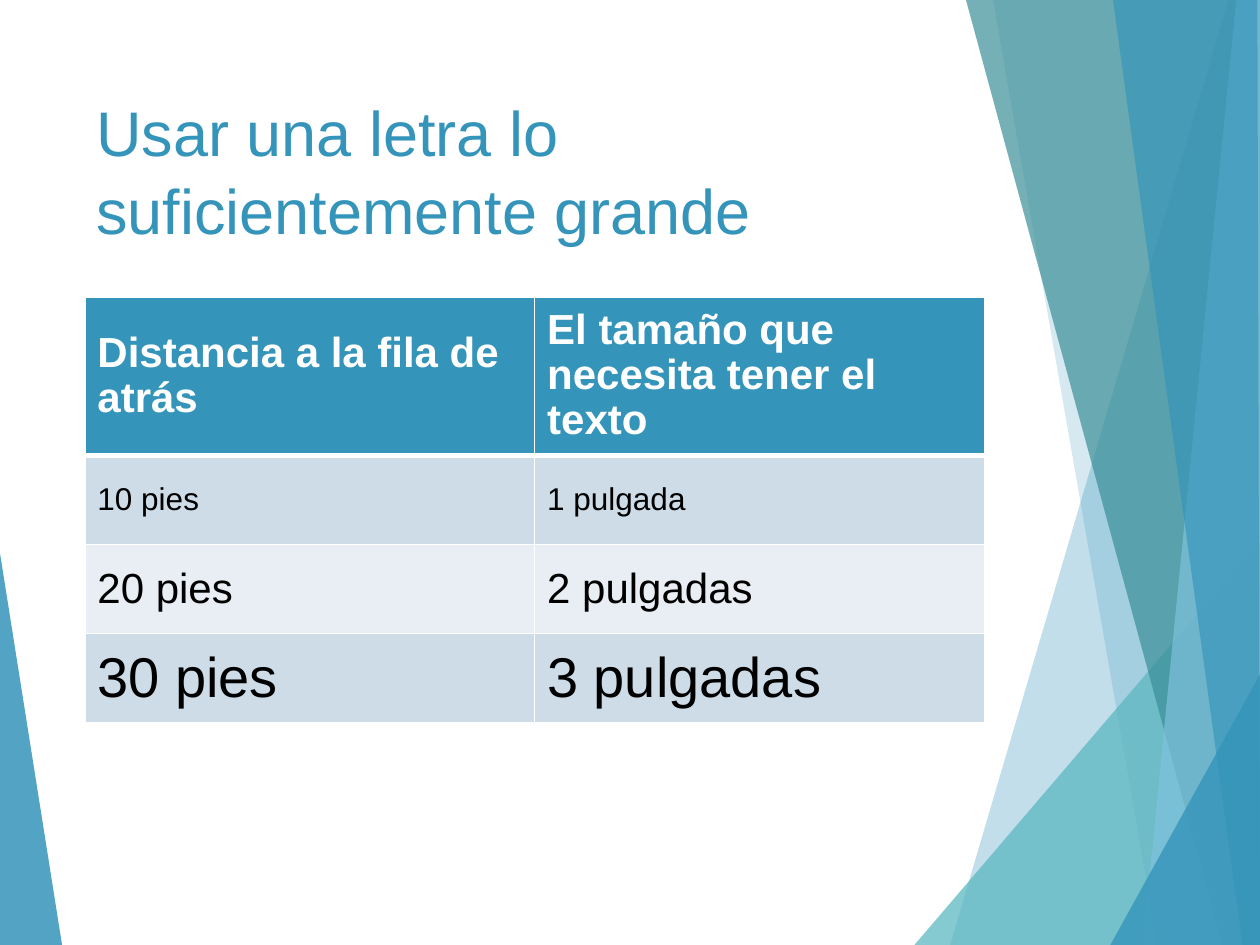
from typing import NamedTuple

from lxml import etree
from pptx import Presentation
from pptx.dml.color import RGBColor
from pptx.enum.shapes import MSO_CONNECTOR
from pptx.enum.text import MSO_ANCHOR
from pptx.oxml.ns import qn
from pptx.util import Pt

STRAIGHT = MSO_CONNECTOR.STRAIGHT
TOP, MIDDLE = MSO_ANCHOR.TOP, MSO_ANCHOR.MIDDLE
FONT = "Arial"
WIDTH, HEIGHT = 720, 540
BLUE, WHITE, BLACK = "3494BA", "FFFFFF", "000000"


class Facet(NamedTuple):
    color: str
    opacity: int  # percent
    corners: list[tuple[float, float]]


class Row(NamedTuple):
    distance: str
    letter_height: str
    size: float
    fill: str
    color: str = BLACK
    height: float = 51
    bold: bool = False
    spacing: float = 1.0
    bottom_border: float = 1


def right_facet(color: str, opacity: int, top_x: float, bottom_x: float,
                top_y: float = 0, right_x: float = WIDTH) -> Facet:
    """A facet whose slanted side faces the right edge of the slide."""
    corners = [(top_x, top_y), (bottom_x, HEIGHT), (WIDTH, HEIGHT)]
    if top_x < right_x:
        corners.append((right_x, top_y))
    return Facet(color, opacity, corners)


GUIDES = [((404, 540), (720, 329)), ((554.5, 0), (651, 540))]

FACETS = [
    Facet(BLUE, 85, [(0, 316), (35.5, HEIGHT), (0, HEIGHT)]),
    right_facet(BLUE, 30, 702, 543),
    right_facet(BLUE, 20, 567.5, 661.5),
    right_facet("58B6C0", 72, 720, 522.5, top_y=309),
    right_facet("3A8F98", 70, 552, 698.5),
    right_facet("7FC1DB", 70, 706.5, 653),
    right_facet(BLUE, 65, 636, 710, right_x=718.5),
    right_facet(BLUE, 80, 720, 634.5, top_y=385.5),
]

ROWS = [
    Row("Distancia a la fila de atrás", "El tamaño que necesita tener el texto",
        24, BLUE, WHITE, 87, True, 0.96, 3),
    Row("10 pies", "1 pulgada", 18, "CEDCE7"),
    Row("20 pies", "2 pulgadas", 24, "E8EEF3"),
    Row("30 pies", "3 pulgadas", 32, "CEDCE7"),
]


def rgb(color: str) -> RGBColor:
    return RGBColor.from_string(color)


def paint(fill, color: str) -> None:
    fill.solid()
    fill.fore_color.rgb = rgb(color)


def write(frame, text: str, size: float, color: str, bold: bool = False,
          spacing: float = 1.0) -> None:
    frame.word_wrap = True
    paragraph = frame.paragraphs[0]
    paragraph.text = text
    paragraph.line_spacing = spacing
    font = paragraph.font
    font.name, font.size, font.bold = FONT, Pt(size), bold
    font.color.rgb = rgb(color)


def draw_guide(slide, start: tuple[float, float], end: tuple[float, float]) -> None:
    guide = slide.shapes.add_connector(
        STRAIGHT, *(Pt(value) for value in start + end))
    guide.line.color.rgb = rgb(WHITE)
    guide.line.width = Pt(0.75)
    etree.SubElement(guide._element.spPr, qn("a:effectLst"))


def draw_facet(slide, facet: Facet) -> None:
    first, *others = [(Pt(x), Pt(y)) for x, y in facet.corners]
    builder = slide.shapes.build_freeform(*first)
    builder.add_line_segments(others, close=True)
    shape = builder.convert_to_shape()
    shape.shadow.inherit = False
    shape.line.fill.background()
    paint(shape.fill, facet.color)
    color = shape._element.spPr.find(qn("a:solidFill"))[0]
    etree.SubElement(color, qn("a:alpha"), val=str(facet.opacity * 1000))


def add_borders(cell, top: float, bottom: float) -> None:
    properties = cell._tc.get_or_add_tcPr()
    for position, (side, width) in enumerate(
            [("lnL", 1), ("lnR", 1), ("lnT", top), ("lnB", bottom)]):
        border = etree.Element(qn(f"a:{side}"), w=str(Pt(width)))
        fill = etree.SubElement(border, qn("a:solidFill"))
        etree.SubElement(fill, qn("a:srgbClr"), val=WHITE)
        properties.insert(position, border)


def draw_table(slide, rows: list[Row], left: float, top: float, width: float) -> None:
    height = sum(row.height for row in rows)
    table = slide.shapes.add_table(
        len(rows), 2, Pt(left), Pt(top), Pt(width), Pt(height)).table
    top_border = 1
    for index, row in enumerate(rows):
        table.rows[index].height = Pt(row.height)
        for column, text in enumerate((row.distance, row.letter_height)):
            cell = table.cell(index, column)
            paint(cell.fill, row.fill)
            cell.vertical_anchor = MIDDLE
            write(cell.text_frame, text, row.size, row.color, row.bold, row.spacing)
            add_borders(cell, top_border, row.bottom_border)
        top_border = row.bottom_border


def main() -> None:
    deck = Presentation()
    deck.slide_width, deck.slide_height = Pt(WIDTH), Pt(HEIGHT)
    slide = deck.slides.add_slide(deck.slide_layouts[6])

    # Decorative background
    for start, end in GUIDES:
        draw_guide(slide, start, end)
    for facet in FACETS:
        draw_facet(slide, facet)

    # Title
    title = slide.shapes.add_textbox(Pt(48), Pt(48), Pt(500), Pt(104)).text_frame
    title.vertical_anchor = TOP
    write(title, "Usar una letra lo suficientemente grande", 36, BLUE, spacing=1.04)

    # Letter size by distance
    draw_table(slide, ROWS, left=48.5, top=170, width=514)

    deck.save("out.pptx")


if __name__ == "__main__":
    main()
